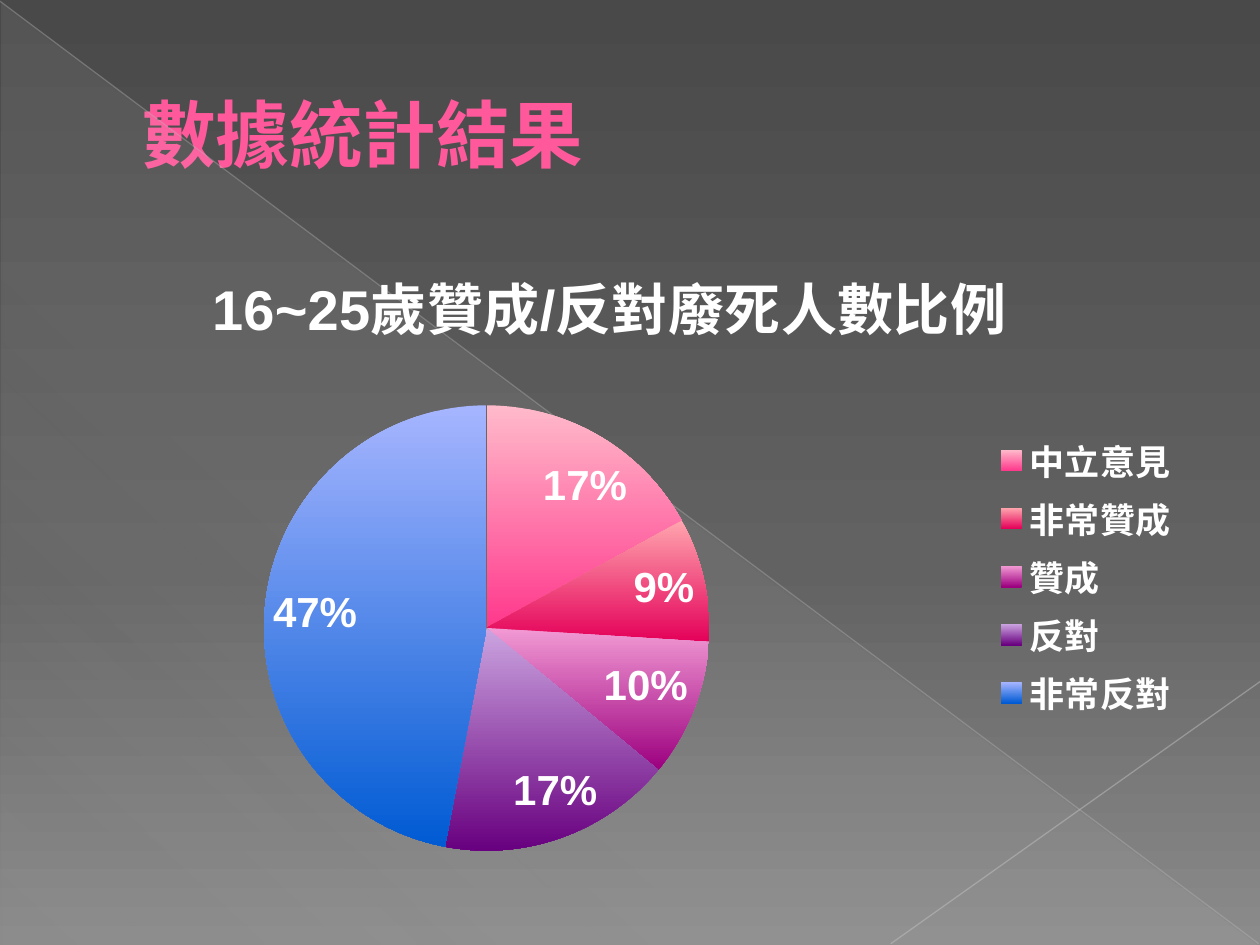
from dataclasses import dataclass

from lxml import etree
from pptx import Presentation
from pptx.chart.data import CategoryChartData
from pptx.dml.color import RGBColor
from pptx.enum import chart as charts, shapes, text
from pptx.oxml import ns
from pptx.util import Pt


@dataclass(frozen=True)
class Theme:
    font: str = "Arial"
    heading_font: str = "TeX Gyre Adventor"
    pink: str = "FF599C"
    white: str = "FFFFFF"
    heading_size: int = 42
    chart_title_size: int = 32
    label_size: int = 24
    legend_size: int = 20


THEME = Theme()
CHART_WIDTH, CHART_HEIGHT = 642.96, 387.36
BACKDROP = [(0, "494949", 100), (60, "626262", 100), (100, "8B8B8B", 100)]
SHEEN = [(0, "D2D2D2", 10), (70, "D2D2D2", 8), (100, "D2D2D2", 1)]
# Opinion, percentage, light top colour, full bottom colour
OPINIONS = [
    ("中立意見", 17, "FFBACB", "FF388C"),
    ("非常贊成", 9, "FFA5AE", "E40059"),
    ("贊成", 10, "F29AD4", "9C007F"),
    ("反對", 17, "CBA4E0", "68007F"),
    ("非常反對", 47, "A6B5FF", "005BD3"),
]


def add_alpha(color, opacity):
    etree.SubElement(color, ns.qn("a:alpha"), val=str(opacity * 1000))


def fill_gradient(fill, stops, angle):
    """Fill with (position, colour, opacity) stops; the angle runs clockwise."""
    fill.solid()
    solid = fill._xPr.find(ns.qn("a:solidFill"))
    gradient = etree.Element(ns.qn("a:gradFill"), rotWithShape="1")
    stop_list = etree.SubElement(gradient, ns.qn("a:gsLst"))
    for position, rgb, opacity in stops:
        stop = etree.SubElement(stop_list, ns.qn("a:gs"), pos=str(position * 1000))
        color = etree.SubElement(stop, ns.qn("a:srgbClr"), val=rgb)
        if opacity < 100:
            add_alpha(color, opacity)
    etree.SubElement(gradient, ns.qn("a:lin"), ang=str(angle * 60000), scaled="0")
    fill._xPr.replace(solid, gradient)


def style_font(font, size, rgb, name=THEME.font):
    font.name = name
    font.size = Pt(size)
    font.bold = True
    font.color.rgb = RGBColor.from_string(rgb)


def add_sheen(slide):
    sheen = slide.shapes.add_shape(
        shapes.MSO_SHAPE.RIGHT_TRIANGLE, Pt(0.72), Pt(1.44), Pt(718.56), Pt(538.56))
    sheen.shadow.inherit = False
    sheen.line.fill.background()
    fill_gradient(sheen.fill, SHEEN, 133)


def add_ray(slide, start, end, rgb, opacity):
    ray = slide.shapes.add_connector(
        shapes.MSO_CONNECTOR.STRAIGHT, *map(Pt, start + end))
    ray.line.width = Pt(0.75)
    ray.line.color.rgb = RGBColor.from_string(rgb)
    properties = ray._element.spPr
    add_alpha(properties.find(".//" + ns.qn("a:srgbClr")), opacity)
    etree.SubElement(properties, ns.qn("a:effectLst"))


def add_heading(slide, wording):
    heading = slide.shapes.title
    heading.left, heading.top, heading.width, heading.height = map(
        Pt, (36, 20.88, 648, 110.16))
    frame = heading.text_frame
    frame.word_wrap = True
    frame.vertical_anchor = text.MSO_ANCHOR.MIDDLE
    frame.margin_left = frame.margin_right = Pt(7.2)
    frame.margin_top = frame.margin_bottom = Pt(7.2)
    paragraph = frame.paragraphs[0]
    paragraph.alignment = text.PP_ALIGN.LEFT
    indent = paragraph._p.get_or_add_pPr()
    indent.set("marL", str(Pt(38.16)))
    indent.set("indent", "0")
    run = paragraph.add_run()
    run.text = wording
    style_font(run.font, THEME.heading_size, THEME.pink, THEME.heading_font)


def place(part, index, **lengths):
    """Give a chart part a manual layout, in points from the chart's corner."""
    for old in part.findall(ns.qn("c:layout")):
        part.remove(old)
    layout = etree.Element(ns.qn("c:layout"))
    manual = etree.SubElement(layout, ns.qn("c:manualLayout"))
    if "plotArea" in part.tag:
        etree.SubElement(manual, ns.qn("c:layoutTarget"), val="inner")
    for axis in "xy":
        etree.SubElement(manual, ns.qn(f"c:{axis}Mode"), val="edge")
    for name, length in lengths.items():
        whole = CHART_WIDTH if name in "xw" else CHART_HEIGHT
        etree.SubElement(manual, ns.qn(f"c:{name}"), val=str(length / whole))
    part.insert(index, layout)


def add_opinion_pie(slide):
    data = CategoryChartData()
    data.categories = [opinion[0] for opinion in OPINIONS]
    data.add_series("Series 1", [opinion[1] for opinion in OPINIONS])
    chart = slide.shapes.add_chart(
        charts.XL_CHART_TYPE.PIE, Pt(38.16), Pt(135.36), Pt(CHART_WIDTH),
        Pt(CHART_HEIGHT), data).chart
    chart.font.name = THEME.font
    chart.font.size = Pt(10)

    chart.has_title = True
    title = chart.chart_title
    title.include_in_layout = False
    run = title.text_frame.paragraphs[0].add_run()
    run.text = "16~25歲贊成/反對廢死人數比例"
    style_font(run.font, THEME.chart_title_size, THEME.white)
    place(title._element, 1, x=77.3, y=6.2)

    chart.has_legend = True
    legend = chart.legend
    legend.position = charts.XL_LEGEND_POSITION.RIGHT
    legend.include_in_layout = False
    style_font(legend.font, THEME.legend_size, THEME.white)
    place(legend._element, 1, x=527.8, y=109.2, w=109.3, h=170)

    pie = chart.plots[0]
    pie.vary_by_categories = True
    for index, (_, _, light, full) in enumerate(OPINIONS):
        slice_format = pie.series[0].points[index].format
        fill_gradient(slice_format.fill, [(0, light, 100), (100, full, 100)], 90)
        slice_format.line.fill.background()
    labels = pie.series[0].data_labels
    labels.show_value = False
    labels.show_percentage = True
    labels.number_format = "0%"
    labels.number_format_is_linked = False
    labels.position = charts.XL_LABEL_POSITION.BEST_FIT
    style_font(labels.font, THEME.label_size, THEME.white)
    plot_area = chart._chartSpace.find(".//" + ns.qn("c:plotArea"))
    place(plot_area, 0, x=112.7, y=96.3, w=254.5, h=254.5)


def main():
    deck = Presentation()
    deck.slide_width, deck.slide_height = Pt(720), Pt(540)
    slide = deck.slides.add_slide(deck.slide_layouts[5])
    fill_gradient(slide.background.fill, BACKDROP, 90)
    add_sheen(slide)
    add_ray(slide, (0, 0.72), (719.28, 539.28), "BEBEBE", 35)
    add_ray(slide, (720, 389.52), (509.04, 539.28), "C5C5C5", 45)
    add_heading(slide, "數據統計結果")
    add_opinion_pie(slide)
    deck.save("out.pptx")


if __name__ == "__main__":
    main()
